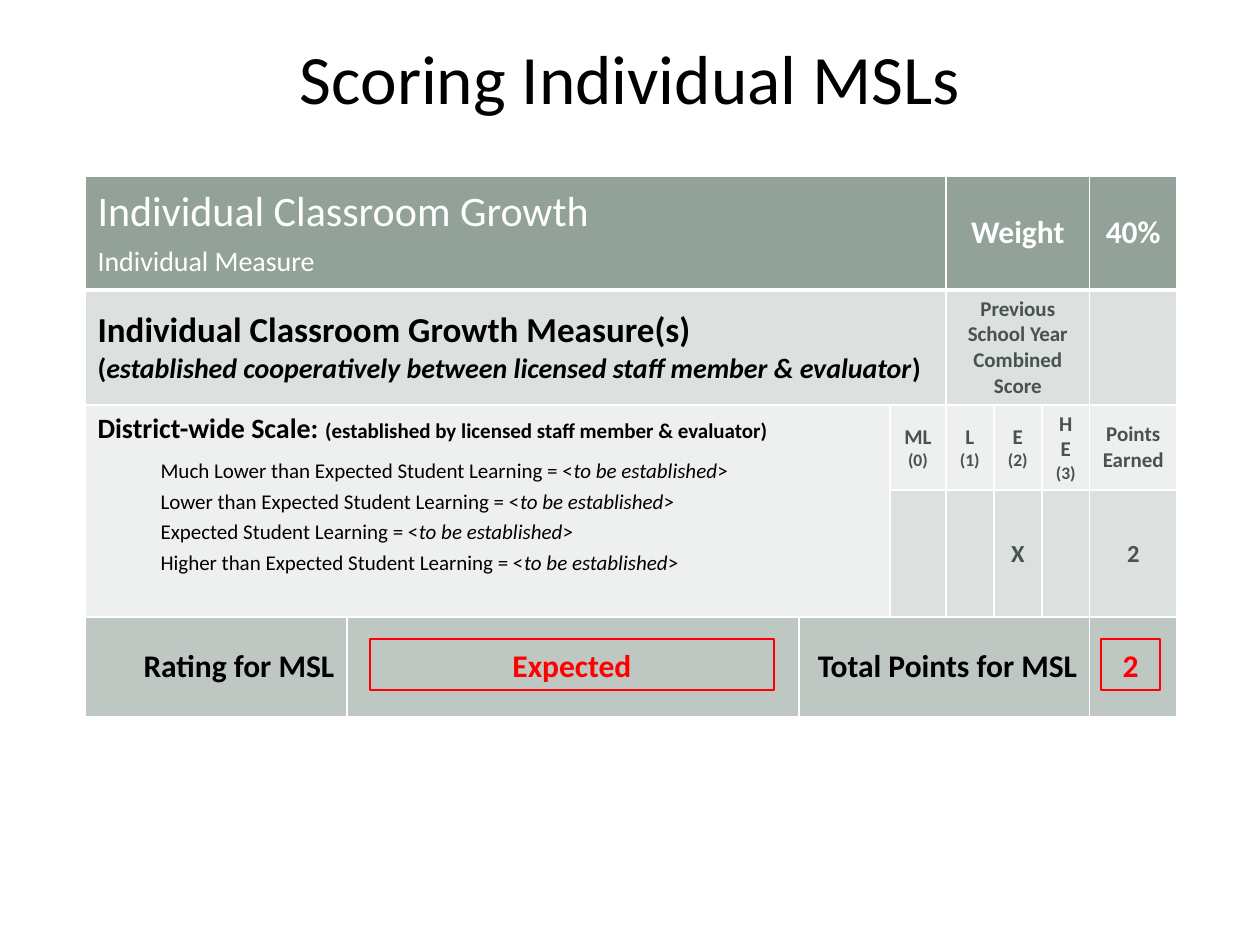
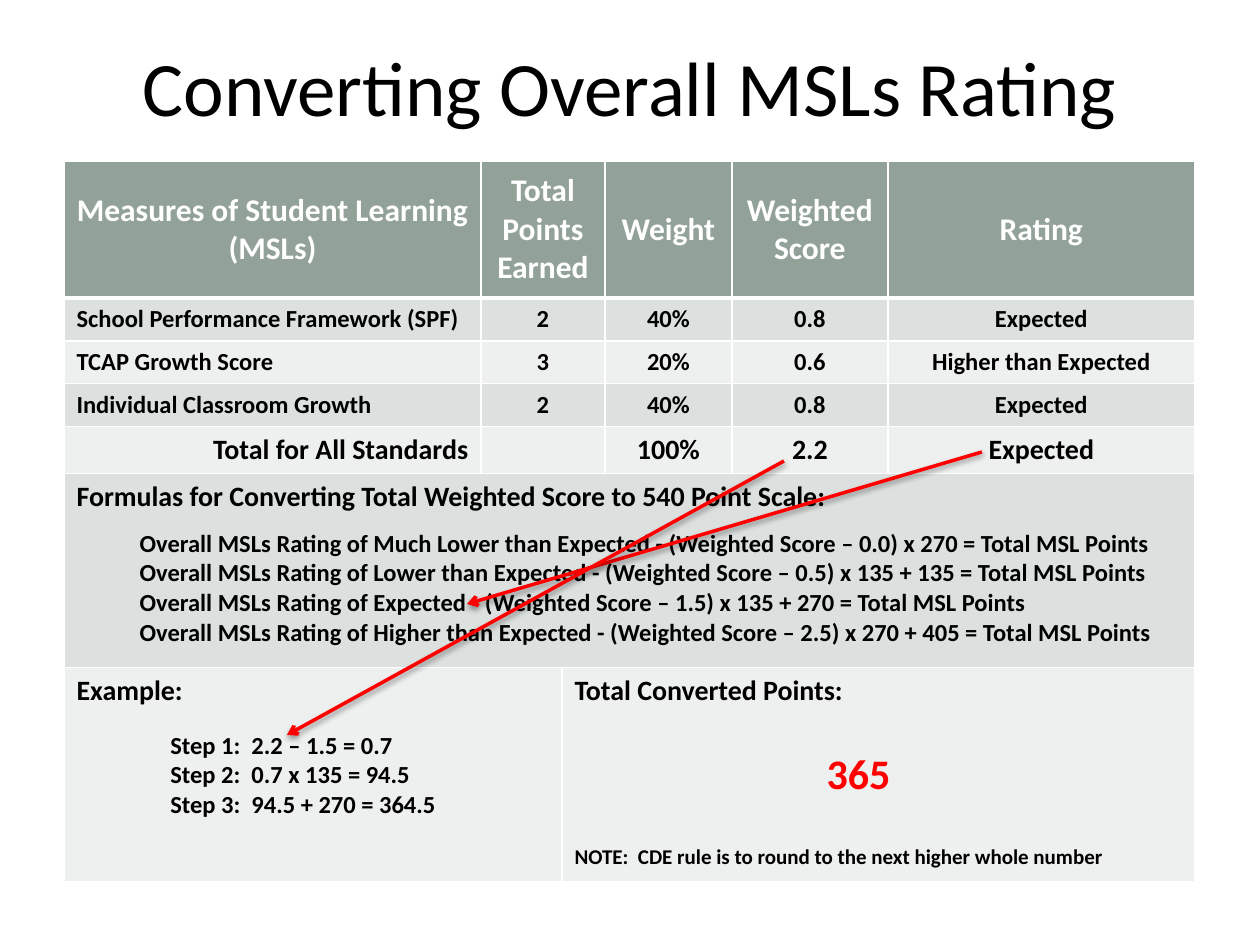
"""Build two slides that score and convert measures of student learning."""
from dataclasses import dataclass
from itertools import product

from lxml.etree import SubElement
from pptx import Presentation
from pptx.dml.color import RGBColor
from pptx.enum.shapes import MSO_CONNECTOR, MSO_SHAPE
from pptx.enum.text import MSO_ANCHOR, PP_ALIGN
from pptx.oxml.ns import qn
from pptx.util import Emu, Pt

EMU_PER_PX = 914400 / 126
FONT = "Calibri"
COLORS = {
    "black": "000000", "white": "FFFFFF", "red": "FF0000", "slate": "47534C",
    "header": "93A299", "footer": "BEC7C2", "dark": "DCE0DE", "light": "EEF0EF",
}
LEFT, CENTER, RIGHT = PP_ALIGN.LEFT, PP_ALIGN.CENTER, PP_ALIGN.RIGHT
TOP, MIDDLE = MSO_ANCHOR.TOP, MSO_ANCHOR.MIDDLE


@dataclass
class Span:
    """A stretch of text in one format."""
    text: str
    size: float
    bold: bool = True
    italic: bool = False


@dataclass
class Line:
    """A paragraph made of spans."""
    spans: list
    color: str = "black"
    align: PP_ALIGN = LEFT
    spacing: float = 1.0
    indent: int = 0
    before: int = 0


def px(length):
    """Turn px into EMU."""
    return Emu(round(length * EMU_PER_PX))


def rgb(name):
    """Look up a colour by name."""
    return RGBColor.from_string(COLORS[name])


def plain(text, size, color="black", align=LEFT, bold=True, **layout):
    """Make a line that has a single format."""
    return Line([Span(text, size, bold)], color, align, **layout)


def write(frame, lines, anchor=MIDDLE):
    """Write lines into a text frame."""
    frame.word_wrap = True
    frame.vertical_anchor = anchor
    for number, line in enumerate(lines):
        para = frame.add_paragraph() if number else frame.paragraphs[0]
        para.alignment = line.align
        para.line_spacing = line.spacing
        para.space_before = Pt(line.before)
        if line.indent:
            para.level = 1
            para._p.get_or_add_pPr().set("marL", str(px(line.indent)))
            para._p.get_or_add_pPr().set("indent", "0")
        for span in line.spans:
            run = para.add_run()
            run.text = span.text
            run.font.name = FONT
            run.font.size = Pt(span.size)
            run.font.bold = span.bold
            run.font.italic = span.italic
            run.font.color.rgb = rgb(line.color)


def add_slide(deck, title, size, top, height):
    """Add a slide with its title."""
    slide = deck.slides.add_slide(deck.slide_layouts[5])
    box = slide.shapes.title
    box.left, box.top, box.width, box.height = px(63), px(top), px(1134), px(height)
    write(box.text_frame, [plain(title, size, align=CENTER, bold=False)])
    return slide


def style_cell(cell, row, fill):
    """Give a cell white borders, a fill and a small empty paragraph."""
    properties = cell._tc.get_or_add_tcPr()
    for side in "LRTB":
        thick = (row, side) in ((0, "B"), (1, "T"))
        border = SubElement(properties, qn(f"a:ln{side}"), w=str(Pt(3 if thick else 1)))
        paint = SubElement(border, qn("a:solidFill"))
        SubElement(paint, qn("a:srgbClr"), val=COLORS["white"])
    cell.fill.solid()
    cell.fill.fore_color.rgb = rgb(fill)
    cell.text_frame.paragraphs[0]._p.get_or_add_endParaRPr().set("sz", "1200")


def add_grid(slide, left, top, widths, heights, fills):
    """Add a table whose rows are filled by name."""
    frame = slide.shapes.add_table(len(heights), len(widths), px(left), px(top),
                                   px(sum(widths)), px(sum(heights)))
    table = frame.table
    table.first_row = table.horz_banding = False
    for column, width in zip(table.columns, widths):
        column.width = px(width)
    for row, height in zip(table.rows, heights):
        row.height = px(height)
    for row, column in product(range(len(heights)), range(len(widths))):
        style_cell(table.cell(row, column), row, fills[row])
    return table


def fill_cell(table, row, column, lines, rows=1, columns=1, anchor=MIDDLE):
    """Merge a block of cells and write into it."""
    cell = table.cell(row, column)
    if rows * columns > 1:
        cell.merge(table.cell(row + rows - 1, column + columns - 1))
    if lines:
        write(cell.text_frame, lines)
    cell.vertical_anchor = anchor


def add_result_box(slide, left, width, text):
    """Add a red outlined box for a result."""
    box = slide.shapes.add_shape(MSO_SHAPE.RECTANGLE, px(left), px(639), px(width), px(51))
    box.shadow.inherit = False
    box.fill.background()
    box.line.color.rgb = rgb("red")
    box.line.width = Pt(1)
    write(box.text_frame, [plain(text, 18, "red", CENTER)])


def add_text(slide, left, top, width, height, lines):
    """Add a text box."""
    box = slide.shapes.add_textbox(px(left), px(top), px(width), px(height))
    write(box.text_frame, lines)


def add_arrow(slide, start, end):
    """Add a red arrow with a soft shadow."""
    arrow = slide.shapes.add_connector(MSO_CONNECTOR.STRAIGHT, *map(px, start + end))
    arrow.line.color.rgb = rgb("red")
    arrow.line.width = Pt(2)
    SubElement(arrow.line._get_or_add_ln(), qn("a:tailEnd"), type="arrow")
    effects = SubElement(arrow._element.spPr, qn("a:effectLst"))
    shadow = SubElement(effects, qn("a:outerShdw"), blurRad=str(Pt(3.1)),
                        dist=str(Pt(1.6)), dir="5400000", rotWithShape="0")
    shade = SubElement(shadow, qn("a:srgbClr"), val=COLORS["black"])
    SubElement(shade, qn("a:alpha"), val="38000")


def scale_lines():
    """Return the district-wide scale as lines."""
    lines = [Line([Span("District-wide Scale: ", 16),
                   Span("(established by licensed staff member & evaluator)", 12)])]
    for level in ("Much Lower than Expected", "Lower than Expected",
                  "Expected", "Higher than Expected"):
        spans = [Span(f"{level} Student Learning = <", 12, False),
                 Span("to be established", 12, False, True), Span(">", 12, False)]
        lines.append(Line(spans, spacing=1.2 if len(lines) > 1 else 1.5, indent=63))
    return lines


def formula_lines():
    """Return the conversion formulas as lines."""
    formulas = (("Much Lower than Expected", "0.0", "270"),
                ("Lower than Expected", "0.5", "135 + 135"),
                ("Expected", "1.5", "135 + 270"),
                ("Higher than Expected", "2.5", "270 + 405"))
    lines = [plain("Formulas for Converting Total Weighted Score to 540 Point Scale:", 16)]
    for rating, base, factor in formulas:
        text = (f"Overall MSLs Rating of {rating} - (Weighted Score – {base})"
                f" x {factor} = Total MSL Points")
        lines.append(plain(text, 14, spacing=1 if len(lines) > 1 else 1.5, indent=63))
    return lines


def build_scoring(deck):
    """Build the slide on scoring one measure."""
    slide = add_slide(deck, "Scoring Individual MSLs", 39.6, 29, 95)
    table = add_grid(slide, 85, 176, (262, 452, 91, 56, 48, 48, 48, 87),
                     (114, 115, 84, 127, 100), ("header", "dark", "light", "dark", "footer"))
    fill_cell(table, 0, 0, [plain("Individual Classroom Growth", 24, "white", bold=False),
                            plain("Individual Measure", 16, "white", bold=False, spacing=1.2)],
              columns=4)
    fill_cell(table, 0, 4, [plain("Weight", 18, "white", CENTER)], columns=3)
    fill_cell(table, 0, 7, [plain("40%", 18, "white", CENTER)])
    established = "established cooperatively between licensed staff member & evaluator"
    fill_cell(table, 1, 0, [plain("Individual Classroom Growth Measure(s)", 20),
                            Line([Span("(", 16), Span(established, 16, italic=True),
                                  Span(")", 16)])], columns=4)
    fill_cell(table, 1, 4, [plain(text, 12, "slate", CENTER) for text in
                            ("Previous", "School Year", "Combined Score")],
              columns=3, anchor=TOP)
    fill_cell(table, 2, 0, scale_lines(), rows=2, columns=3, anchor=TOP)
    for score, level in enumerate(("ML", "L", "E", "HE")):
        fill_cell(table, 2, 3 + score, [plain(level, 12, "slate", CENTER),
                                        plain(f"({score})", 10, "slate", CENTER)])
    fill_cell(table, 2, 7, [plain(text, 12, "slate", CENTER) for text in ("Points", "Earned")])
    for column, text in ((5, "X"), (7, "2")):
        fill_cell(table, 3, column, [plain(text, 14, "slate", CENTER)])
    fill_cell(table, 4, 0, [plain("Rating for MSL", 18, align=RIGHT)])
    fill_cell(table, 4, 2, [plain("Total Points for MSL", 18, align=RIGHT)], columns=5)
    add_result_box(slide, 370, 404, "Expected")
    add_result_box(slide, 1101, 59, "2")


def build_converting(deck):
    """Build the slide on converting the overall rating."""
    slide = add_slide(deck, "Converting Overall MSLs Rating", 44, 15, 141)
    fills = ("header", "dark", "light", "dark", "light", "dark", "light")
    table = add_grid(slide, 64, 161, (417, 81, 43, 127, 156, 307),
                     (137, 43, 42, 43, 47, 194, 214), fills)
    measures = (
        ("Measures of Student Learning (MSLs)", "Total Points Earned", "Weight",
         "Weighted Score", "Rating"),
        ("School Performance Framework (SPF)", "2", "40%", "0.8", "Expected"),
        ("TCAP Growth Score", "3", "20%", "0.6", "Higher than Expected"),
        ("Individual Classroom Growth", "2", "40%", "0.8", "Expected"),
        ("Total for All Standards", "", "100%", "2.2", "Expected"),
    )
    sizes = (18, 14, 14, 14, 16)
    label_aligns = (CENTER, LEFT, LEFT, LEFT, RIGHT)
    for row, values in enumerate(measures):
        for column, text in zip((0, 1, 3, 4, 5), values):
            align = CENTER if column else label_aligns[row]
            color = "black" if row else "white"
            lines = [plain(text, sizes[row], color, align)] if text else []
            fill_cell(table, row, column, lines, columns=2 if column == 1 else 1)
    fill_cell(table, 5, 0, formula_lines(), columns=6, anchor=TOP)
    fill_cell(table, 6, 0, [plain("Example:", 16)], columns=2, anchor=TOP)
    note = "NOTE:  CDE rule is to round to the next higher whole number"
    fill_cell(table, 6, 2, [plain("Total Converted Points:", 16), plain(note, 12, before=78)],
              columns=4, anchor=TOP)
    steps = ("2.2 – 1.5 = 0.7", "0.7 x 135 = 94.5", "94.5 + 270 = 364.5")
    add_text(slide, 158, 723, 314, 102, [plain(f"Step {number}:  {step}", 14)
                                         for number, step in enumerate(steps, 1)])
    add_text(slide, 784, 741, 149, 63, [plain("365", 24, "red", CENTER)])
    add_arrow(slide, (982, 452), (467, 604))
    add_arrow(slide, (784, 461), (287, 735))


def main():
    """Build and save the deck."""
    deck = Presentation()
    deck.slide_width, deck.slide_height = px(1260), px(945)
    build_scoring(deck)
    build_converting(deck)
    deck.save("out.pptx")


if __name__ == "__main__":
    main()
